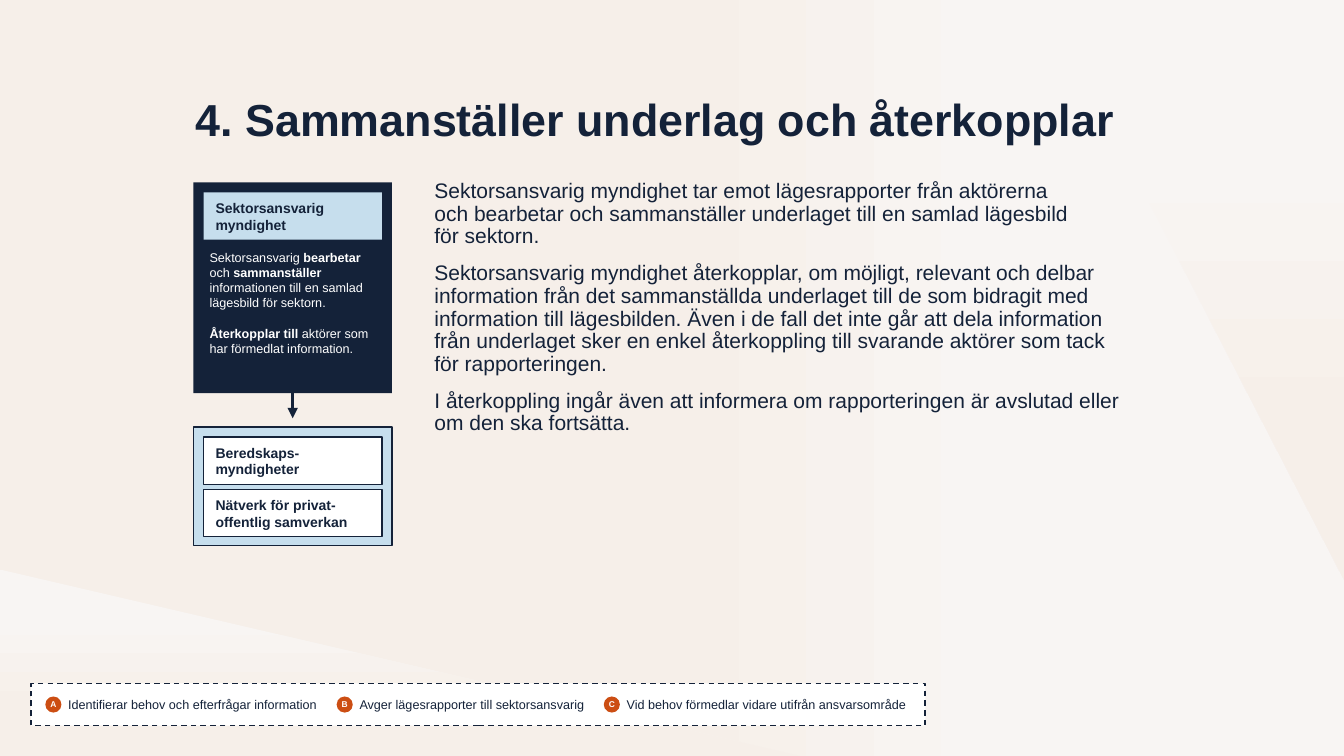
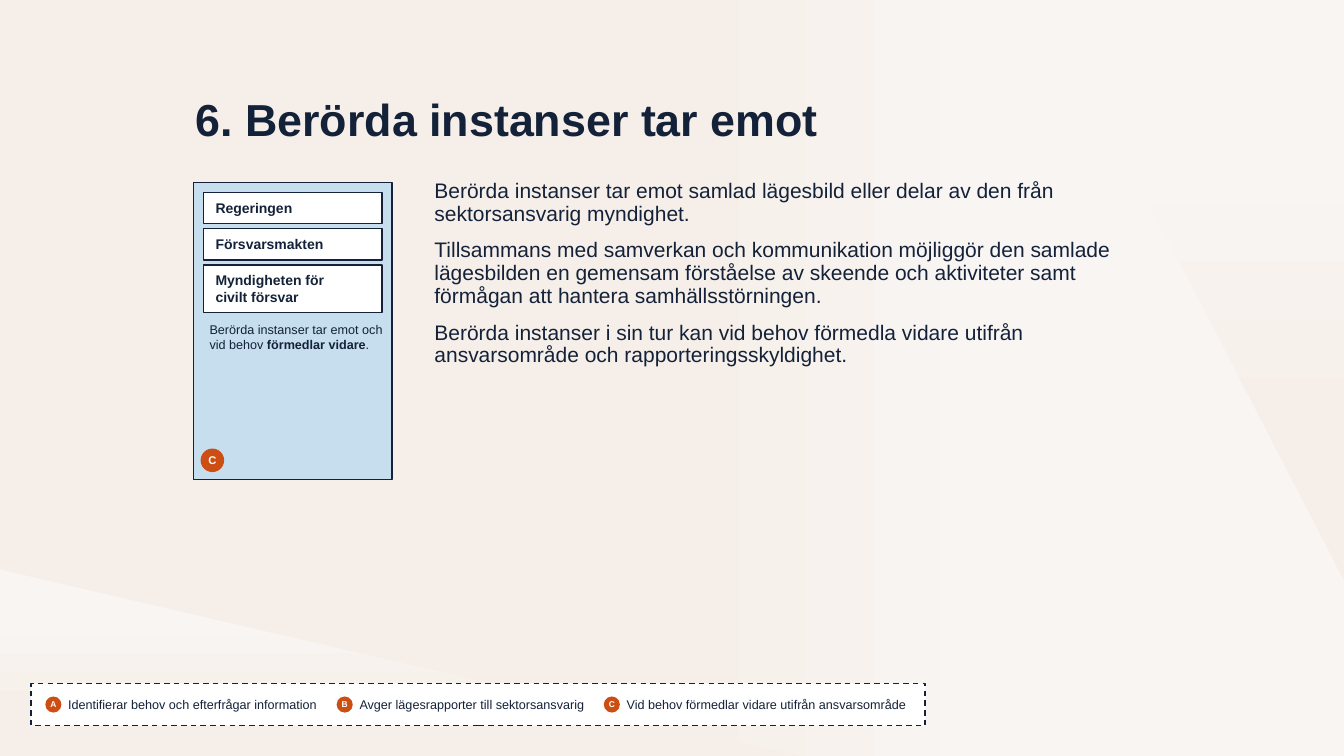
from copy import deepcopy

from lxml import etree
from pptx import Presentation
from pptx.dml.color import RGBColor
from pptx.enum.dml import MSO_LINE
from pptx.enum.shapes import MSO_CONNECTOR, MSO_SHAPE
from pptx.enum.text import MSO_ANCHOR, MSO_AUTO_SIZE, PP_ALIGN
from pptx.oxml.ns import qn
from pptx.util import Pt

RECT, OVAL, STRAIGHT = MSO_SHAPE.RECTANGLE, MSO_SHAPE.OVAL, MSO_CONNECTOR.STRAIGHT
TOP, MIDDLE = MSO_ANCHOR.TOP, MSO_ANCHOR.MIDDLE
LEFT, CENTER = PP_ALIGN.LEFT, PP_ALIGN.CENTER
DASH, NO_FIT = MSO_LINE.DASH, MSO_AUTO_SIZE.NONE

FONT = "Arial"
COLORS = {"navy": "142239", "sky": "C6DEED", "white": "FFFFFF",
          "orange": "CC4E13", "sand": "F6EFE9", "mist": "F8F5F3"}

W, H = 960, 540
CARD_X, CARD_Y, CARD_W = 138.2, 130.3, 141.8
PAD, CHIP_GAP = 7.2, 3.5
ONE_LINE, TWO_LINES = 22.4, 33.8
DOWNWARD = 270

LEGEND = [("A", 32.4, 194, "Identifierar behov och efterfrågar information"),
          ("B", 240.5, 187, "Avger lägesrapporter till sektorsansvarig"),
          ("C", 431.3, 220, "Vid behov förmedlar vidare utifrån ansvarsområde")]


def rgb(name):
    return RGBColor.from_string(COLORS[name])


class Deck:
    """Holds the style and the current slide."""

    def __init__(self):
        self.prs = Presentation()
        self.prs.slide_width, self.prs.slide_height = Pt(W), Pt(H)
        self.layout = self.prs.slide_layouts[1]
        self.s = None

    def slide(self, title, paragraphs):
        first = self.s is None
        self.s = self.prs.slides.add_slide(self.layout)
        if first:
            self.background()
        self.placeholder(0, (132.5, 66.2, 672.5, 42.5), [title], 32, MIDDLE, bold=True)
        self.placeholder(1, (303.1, 125.3, 511.2, 308.9), paragraphs, 15, TOP, before=10)
        self.legend()

    # Background panels, kept on the layout
    def background(self):
        panels = [
            self.panel([(0, 0), (W, 0), (W, H), (0, H)], "sand", "mist", 0.5, 0),
            self.panel([(0, 406.8), (571.7, H), (0, H)], "mist", "sand", 0.25, DOWNWARD),
            self.panel([(746, 0), (W, 414), (W, 0)], "mist", "sand", 0.25, DOWNWARD),
        ]
        for i, panel in enumerate(panels):
            self.layout.shapes._spTree.insert(2 + i, panel._element)

    def panel(self, points, start, end, start_at, angle):
        (x, y), *rest = [(Pt(px), Pt(py)) for px, py in points]
        builder = self.s.shapes.build_freeform(x, y)
        builder.add_line_segments(rest, close=True)
        sp = builder.convert_to_shape()
        sp.shadow.inherit = False
        sp.line.fill.background()
        sp.fill.gradient()
        sp.fill.gradient_angle = angle
        for stop, color, at in zip(sp.fill.gradient_stops, (start, end), (start_at, 0.75)):
            stop.color.rgb = rgb(color)
            stop.position = at
        return sp

    # Text
    def set_text(self, tf, paragraphs, size, color="navy", bold=False, align=LEFT,
                 anchor=TOP, insets=(7.2, 3.6, 7.2, 3.6), before=0, spacing=None):
        """Fill a text frame; **marked** parts become bold."""
        tf.word_wrap, tf.auto_size, tf.vertical_anchor = True, NO_FIT, anchor
        tf.margin_left, tf.margin_top, tf.margin_right, tf.margin_bottom = map(Pt, insets)
        for i, text in enumerate(paragraphs):
            p = tf.add_paragraph() if i else tf.paragraphs[0]
            parts = text.split("**")
            p.text = parts[0]
            for part in parts[1:]:
                p.add_run().text = part
            p.alignment, p.line_spacing = align, spacing
            p.space_before, p.space_after = Pt(before if i else 0), Pt(0)
            for r in p.runs:
                r.font.name, r.font.size = FONT, Pt(size)
                r.font.bold = bold or r.text in parts[1::2]
                r.font.color.rgb = rgb(color)
            # Line breaks take the size of the text around them
            for br in p._p.findall(qn("a:br")):
                br.append(deepcopy(p.runs[0]._r.rPr))

    def placeholder(self, idx, box, paragraphs, size, anchor, **style):
        sp = self.s.placeholders[idx]
        sp.left, sp.top, sp.width, sp.height = map(Pt, box)
        self.set_text(sp.text_frame, paragraphs, size, anchor=anchor, spacing=0.9, **style)
        for p in sp.text_frame.paragraphs:
            pPr = p._p.get_or_add_pPr()
            pPr.set("marL", "0")
            pPr.set("indent", "0")
            etree.SubElement(pPr, qn("a:buNone"))

    def label(self, x, y, w, h, text):
        tb = self.s.shapes.add_textbox(Pt(x), Pt(y), Pt(w), Pt(h))
        self.set_text(tb.text_frame, [text], 9)

    # Shapes
    def shape(self, kind, x, y, w, h, fill, line=None):
        sp = self.s.shapes.add_shape(kind, Pt(x), Pt(y), Pt(w), Pt(h))
        sp.shadow.inherit = False
        sp.fill.solid()
        sp.fill.fore_color.rgb = rgb(fill)
        if line:
            sp.line.color.rgb = rgb(line)
            sp.line.width = Pt(1)
        else:
            sp.line.fill.background()
        return sp

    def card(self, y, h, fill="sky", line="navy", paragraphs=(), text_top=0, **style):
        sp = self.shape(RECT, CARD_X, y, CARD_W, h, fill, line)
        if paragraphs:
            self.set_text(sp.text_frame, paragraphs, 9,
                          insets=(11.5, text_top, 5.8, 11.5), **style)
        return sp

    def chips(self, card_y, items, fill="white", line="navy"):
        """Stack heading boxes from the top of a card."""
        y = card_y + PAD
        for text, h in items:
            sp = self.shape(RECT, CARD_X + PAD, y, CARD_W - 2 * PAD, h, fill, line)
            self.set_text(sp.text_frame, [text], 10, bold=True, anchor=MIDDLE,
                          insets=(8.6, 0, 5.8, 0))
            y += h + CHIP_GAP

    def badge(self, x, y, d, letter, size):
        sp = self.shape(OVAL, x, y, d, d, "orange")
        self.set_text(sp.text_frame, [letter], size, "white", bold=True, align=CENTER,
                      anchor=MIDDLE, insets=(0, 0, 0, 0))

    def arrow_down(self, card, end_y):
        x = Pt(CARD_X + CARD_W / 2)
        c = self.s.shapes.add_connector(STRAIGHT, x, card.top + card.height, x, Pt(end_y))
        c.begin_connect(card, 2)
        c.line.color.rgb = rgb("navy")
        c.line.width = Pt(2.5)
        etree.SubElement(c.line._get_or_add_ln(), qn("a:tailEnd"), type="triangle")
        etree.SubElement(c._element.spPr, qn("a:effectLst"))

    def legend(self):
        frame = self.shape(RECT, 22.3, 488.2, 638.6, 30.2, "white", "navy")
        frame.line.dash_style = DASH
        for letter, x, w, text in LEGEND:
            self.badge(x, 497.5, 11.5, letter, 6)
            self.label(x + 9.2, 494, w, 18, text)


def main():
    deck = Deck()

    # Slide 1: compile and give feedback
    deck.slide("4. Sammanställer underlag och återkopplar", [
        "Sektorsansvarig myndighet tar emot lägesrapporter från aktörerna \n"
        "och bearbetar och sammanställer underlaget till en samlad lägesbild \n"
        "för sektorn.",
        "Sektorsansvarig myndighet återkopplar, om möjligt, relevant och delbar "
        "information från det sammanställda underlaget till de som bidragit med "
        "information till lägesbilden. Även i de fall det inte går att dela "
        "information från underlaget sker en enkel återkoppling till svarande "
        "aktörer som tack för rapporteringen.",
        "I återkoppling ingår även att informera om rapporteringen är avslutad "
        "eller om den ska fortsätta."])
    sector = deck.card(CARD_Y, 150.5, "navy", None, [
        "Sektorsansvarig **bearbetar** och **sammanställer** informationen "
        "till en samlad lägesbild för sektorn.",
        "**Återkopplar till **aktörer som har förmedlat information."],
        48.2, color="white", before=10.8)
    deck.chips(CARD_Y, [("Sektorsansvarig \nmyndighet", TWO_LINES)], "sky", None)
    receivers_y = 305.1
    deck.card(receivers_y, 84.4)
    deck.chips(receivers_y, [("Beredskaps-myndigheter", TWO_LINES),
                             ("Nätverk för privat-offentlig samverkan", TWO_LINES)])
    deck.arrow_down(sector, 298.8)

    # Slide 2: receiving bodies
    deck.slide("6. Berörda instanser tar emot", [
        "Berörda instanser tar emot samlad lägesbild eller delar av den från "
        "sektorsansvarig myndighet.",
        "Tillsammans med samverkan och kommunikation möjliggör den samlade "
        "lägesbilden en gemensam förståelse av skeende och aktiviteter samt "
        "förmågan att hantera samhällsstörningen.",
        "Berörda instanser i sin tur kan vid behov förmedla vidare utifrån "
        "ansvarsområde och rapporteringsskyldighet."])
    deck.card(CARD_Y, 212.4, paragraphs=[
        "Berörda instanser tar emot och vid behov **förmedlar vidare**."],
        text_top=99.4)
    deck.chips(CARD_Y, [("Regeringen", ONE_LINE), ("Försvarsmakten", ONE_LINE),
                        ("Myndigheten för \ncivilt försvar", TWO_LINES)])
    deck.badge(143.3, 320.4, 16.8, "C", 8)

    deck.prs.save("out.pptx")


if __name__ == "__main__":
    main()
